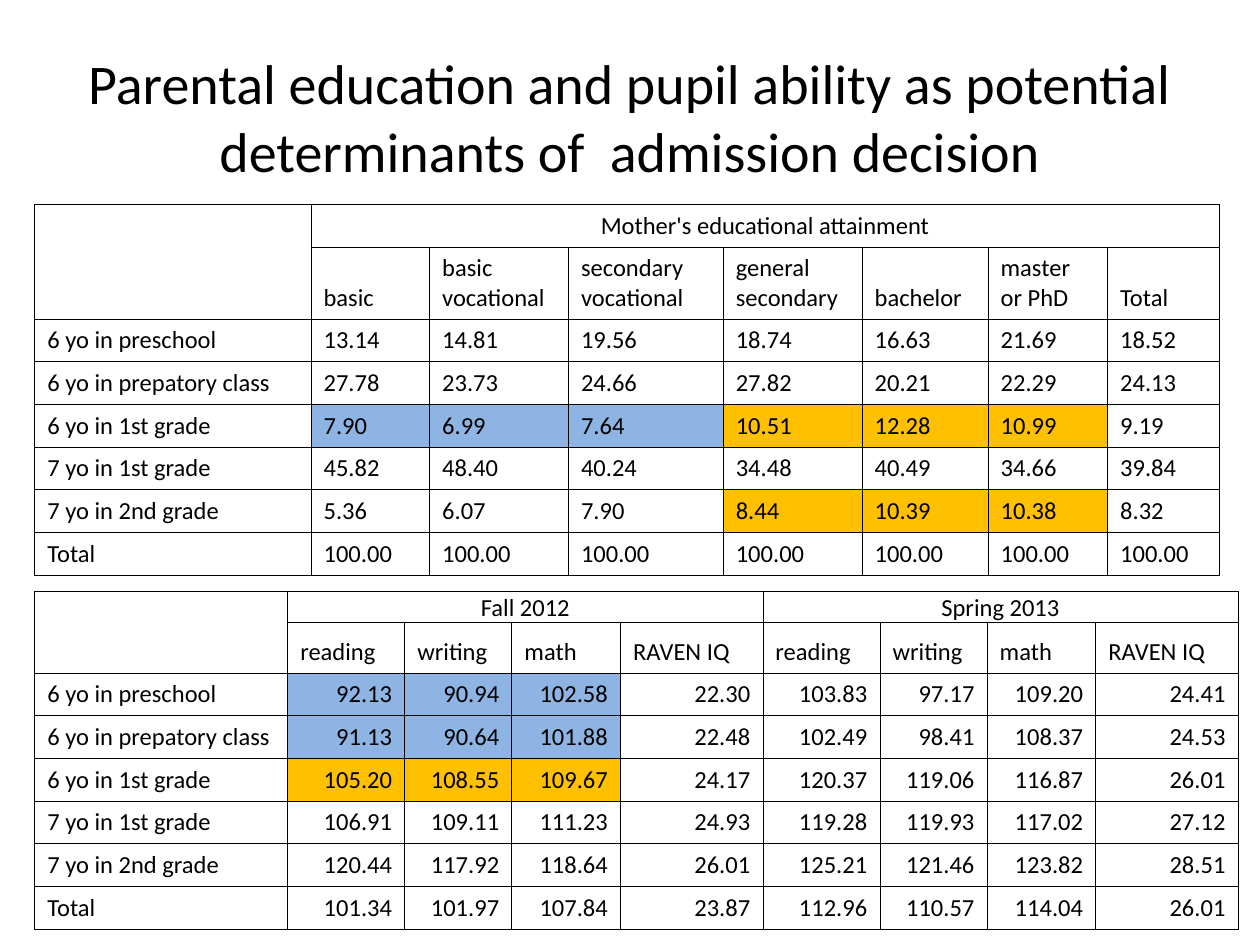
from dataclasses import dataclass, field

from lxml.etree import SubElement
from pptx import Presentation
from pptx.dml.color import RGBColor
from pptx.enum.text import MSO_ANCHOR as Anchor, PP_ALIGN as Align
from pptx.oxml.ns import qn
from pptx.util import Cm, Pt

FONT = "Calibri"
BLACK, BLUE, ORANGE = "000000", "8EB4E3", "FFC000"
ROW_HEIGHT = 0.86
TIGHT = {"margin_left": Cm(0.03), "margin_right": Cm(0.03),
         "margin_top": Cm(0.03), "margin_bottom": 0}


@dataclass
class Group:
    """A heading that spans several columns."""
    text: str
    first: int
    last: int


@dataclass
class Highlight:
    """A filled block of cells, first and last included."""
    color: str
    rows: tuple[int, int]
    cols: tuple[int, int]


@dataclass
class Grid:
    left: float
    top: float
    widths: list[float]
    head_heights: tuple[float, float]
    groups: list[Group]
    headings: list[str]
    values: list[str]
    value_align: Align
    highlights: list[Highlight]
    group_format: dict = field(default_factory=dict)


def rgb(color: str) -> RGBColor:
    return RGBColor.from_string(color)


def apply(target, values: dict) -> None:
    for name, value in values.items():
        setattr(target, name, value)


def write(frame, text: str, size: int, align: Align) -> None:
    para = frame.paragraphs[0]
    para.alignment = align
    span = para.add_run()
    span.text = text
    apply(span.font, {"name": FONT, "size": Pt(size)})
    span.font.color.rgb = rgb(BLACK)


def add_borders(cell) -> None:
    props = cell._tc.get_or_add_tcPr()
    for index, side in enumerate(("lnL", "lnR", "lnT", "lnB")):
        line = SubElement(props, qn(f"a:{side}"), w=str(Pt(0.5)))
        fill = SubElement(line, qn("a:solidFill"))
        SubElement(fill, qn("a:srgbClr"), val=BLACK)
        props.insert(index, line)  # borders come before the fill


def add_grid(page, grid: Grid) -> None:
    body = [line.split("|") for line in grid.values]
    heights = [*grid.head_heights, *[ROW_HEIGHT] * len(body)]
    table = page.shapes.add_table(
        len(heights), len(grid.widths), Cm(grid.left), Cm(grid.top),
        Cm(sum(grid.widths)), Cm(sum(heights))).table
    apply(table, {"first_row": False, "horz_banding": False})
    for column, width in zip(table.columns, grid.widths):
        column.width = Cm(width)
    for row, height in zip(table.rows, heights):
        row.height = Cm(height)

    # Plain cells with thin borders
    for cell in table.iter_cells():
        cell.fill.background()
        cell.vertical_anchor = Anchor.BOTTOM
        add_borders(cell)

    # Headings
    table.cell(0, 0).merge(table.cell(1, 0))
    for group in grid.groups:
        cell = table.cell(0, group.first)
        cell.merge(table.cell(0, group.last))
        apply(cell, grid.group_format)
        write(cell.text_frame, group.text, 14, Align.CENTER)
    for col, text in enumerate(grid.headings, 1):
        write(table.cell(1, col).text_frame, text, 14, Align.LEFT)

    # Row labels and values
    for row, texts in enumerate(body, 2):
        for col, text in enumerate(texts):
            align = grid.value_align if col else Align.LEFT
            write(table.cell(row, col).text_frame, text, 14, align)

    # Highlighted blocks
    for mark in grid.highlights:
        for row in range(mark.rows[0], mark.rows[1] + 1):
            for col in range(mark.cols[0], mark.cols[1] + 1):
                fill = table.cell(row, col).fill
                fill.solid()
                fill.fore_color.rgb = rgb(mark.color)


SCORES = ["reading", "writing", "math", "RAVEN IQ"]
SCORE_WIDTHS = [2.36, 2.16, 2.19, 2.87]

ability = Grid(
    left=0.7, top=11.92, widths=[5.1, *SCORE_WIDTHS * 2],
    head_heights=(0.63, ROW_HEIGHT),
    groups=[Group("Fall 2012", 1, 4), Group("Spring 2013", 5, 8)],
    headings=SCORES * 2,
    values=[
        "6 yo in preschool|92.13|90.94|102.58|22.30|103.83|97.17|109.20|24.41",
        "6 yo in prepatory class|91.13|90.64|101.88|22.48|102.49|98.41|108.37|24.53",
        "6 yo in 1st grade|105.20|108.55|109.67|24.17|120.37|119.06|116.87|26.01",
        "7 yo in 1st grade|106.91|109.11|111.23|24.93|119.28|119.93|117.02|27.12",
        "7 yo in 2nd grade|120.44|117.92|118.64|26.01|125.21|121.46|123.82|28.51",
        "Total|101.34|101.97|107.84|23.87|112.96|110.57|114.04|26.01",
    ],
    value_align=Align.RIGHT,
    highlights=[Highlight(BLUE, (2, 3), (1, 3)),
                Highlight(ORANGE, (4, 4), (1, 3))],
    group_format=TIGHT,
)

education = Grid(
    left=0.7, top=4.12, widths=[5.57, 2.39, 2.8, 3.12, 2.8, 2.54, 2.41, 2.25],
    head_heights=(ROW_HEIGHT, 1.45),
    groups=[Group("Mother's educational attainment", 1, 7)],
    headings=["basic", "basic vocational", "secondary vocational",
              "general secondary", "bachelor", "master or PhD", "Total"],
    values=[
        "6 yo in preschool|13.14|14.81|19.56|18.74|16.63|21.69|18.52",
        "6 yo in prepatory class|27.78|23.73|24.66|27.82|20.21|22.29|24.13",
        "6 yo in 1st grade|7.90|6.99|7.64|10.51|12.28|10.99|9.19",
        "7 yo in 1st grade|45.82|48.40|40.24|34.48|40.49|34.66|39.84",
        "7 yo in 2nd grade|5.36|6.07|7.90|8.44|10.39|10.38|8.32",
        "Total" + "|100.00" * 7,
    ],
    value_align=Align.LEFT,
    highlights=[Highlight(BLUE, (4, 4), (1, 3)),
                Highlight(ORANGE, (4, 4), (4, 6)),
                Highlight(ORANGE, (6, 6), (4, 6))],
)


def main() -> None:
    deck = Presentation()
    apply(deck, {"slide_width": Cm(25.4), "slide_height": Cm(19.05)})
    page = deck.slides.add_slide(deck.slide_layouts[6])

    # Title
    box = page.shapes.add_textbox(Cm(1.27), Cm(0.75), Cm(22.86), Cm(3.18))
    apply(box.text_frame, {"word_wrap": True, "vertical_anchor": Anchor.MIDDLE})
    write(box.text_frame, "Parental education and pupil ability as potential "
          "determinants of  admission decision", 32, Align.CENTER)

    # Tables
    for grid in (ability, education):
        add_grid(page, grid)

    deck.save("out.pptx")


if __name__ == "__main__":
    main()
